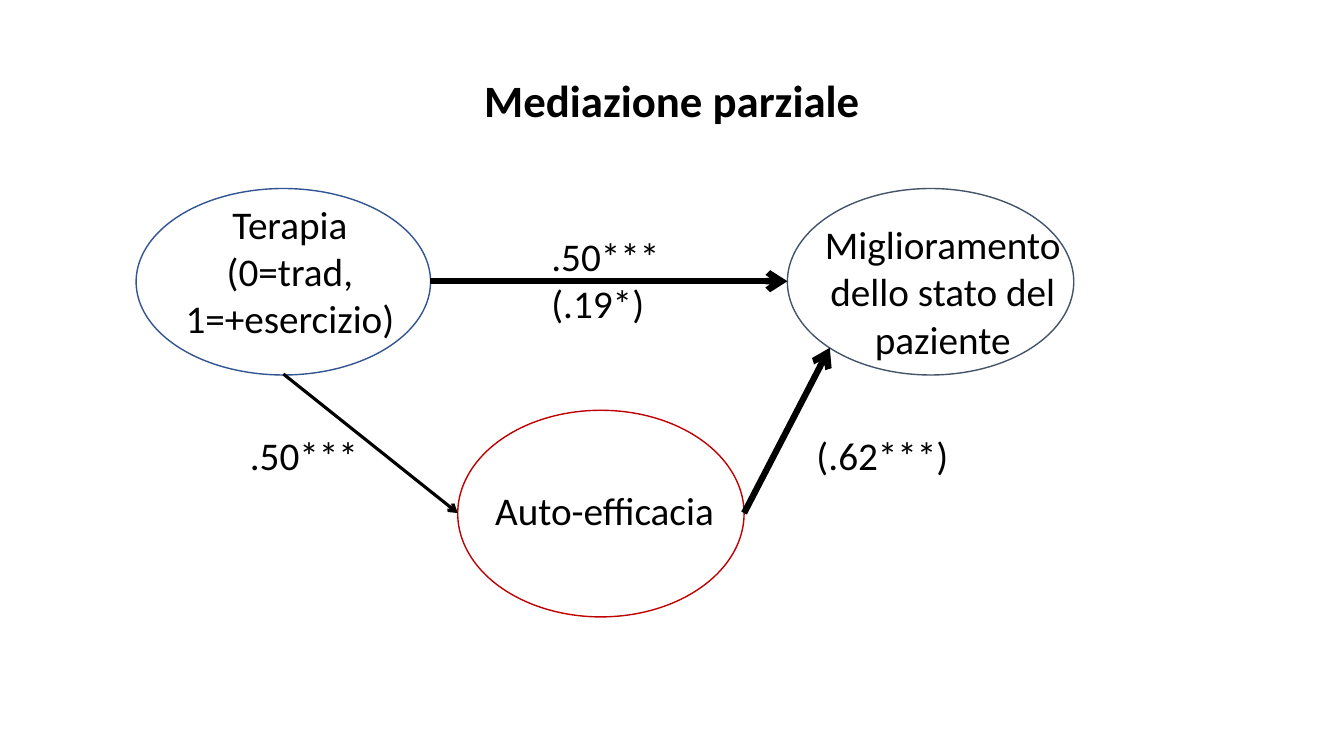
from lxml import etree
from pptx import Presentation
from pptx.dml.color import RGBColor
from pptx.enum.shapes import MSO_CONNECTOR, MSO_SHAPE
from pptx.enum.text import PP_ALIGN
from pptx.oxml.ns import qn
from pptx.util import Inches, Pt

BLACK = RGBColor(0x00, 0x00, 0x00)
BLUE = RGBColor(0x32, 0x54, 0x91)
RED = RGBColor(0xC0, 0x00, 0x00)
SLATE = RGBColor(0x44, 0x54, 0x6A)

presentation = Presentation()
presentation.slide_width = Inches(13.33)
presentation.slide_height = Inches(7.5)
slide = presentation.slides.add_slide(presentation.slide_layouts[6])


def add_text(text, box, alignment=PP_ALIGN.CENTER, size=28, bold=False):
    text_frame = slide.shapes.add_textbox(*map(Inches, box)).text_frame
    text_frame.word_wrap = True
    text_frame.text = text
    for paragraph in text_frame.paragraphs:
        paragraph.alignment = alignment
        font = paragraph.runs[0].font
        font.name = "Calibri"
        font.size = Pt(size)
        font.bold = bold
        font.color.rgb = BLACK


add_text("Mediazione parziale", (0, 0.67, 13.33, 0.64), size=32, bold=True)

# Variables of the model
variables = [
    ("Terapia (0=trad, 1=+esercizio)", (1.35, 1.87, 2.92, 1.85), BLUE, (1.63, 1.94, 2.49, 1.52)),
    ("Auto-efficacia", (4.54, 4.07, 2.84, 2.05), RED, (4.62, 4.78, 2.75, 0.57)),
    ("Miglioramento dello stato del paziente", (7.81, 1.87, 2.84, 1.85), SLATE, (8.01, 2.14, 2.68, 1.52)),
]
for name, ellipse_box, color, text_box in variables:
    ellipse = slide.shapes.add_shape(MSO_SHAPE.OVAL, *map(Inches, ellipse_box))
    ellipse.shadow.inherit = False
    ellipse.fill.background()
    ellipse.line.color.rgb = color
    ellipse.line.width = Pt(1)
    add_text(name, text_box)

# Paths between the variables
paths = [
    ((4.27, 2.79, 7.81, 2.79), 4.5),
    ((7.38, 5.09, 8.23, 3.45), 4.5),
    ((2.81, 3.71, 4.54, 5.09), 2.25),
]
for ends, width in paths:
    arrow = slide.shapes.add_connector(MSO_CONNECTOR.STRAIGHT, *map(Inches, ends))
    arrow.line.color.rgb = BLACK
    arrow.line.width = Pt(width)
    etree.SubElement(arrow.line._get_or_add_ln(), qn("a:tailEnd"), type="arrow")
    etree.SubElement(arrow._element.spPr, qn("a:effectLst"))

# Path coefficients
coefficients = [
    (".50***\n(.19*)", (5.37, 2.26, 1.73, 1.04)),
    ("(.62***)", (8, 4.23, 2.13, 0.57)),
    (".50***", (2.38, 4.23, 1.73, 0.57)),
]
for coefficient, box in coefficients:
    add_text(coefficient, box, PP_ALIGN.LEFT)

presentation.save("out.pptx")
